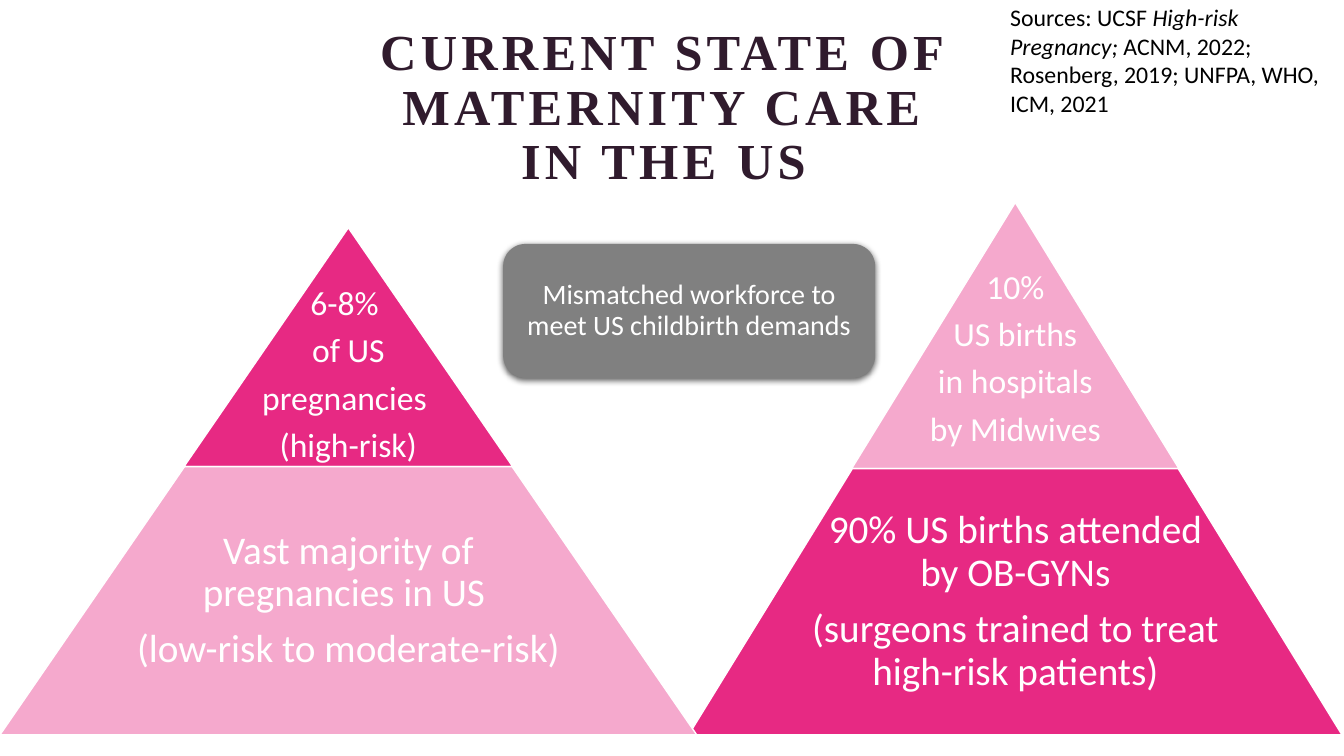
from dataclasses import dataclass

from lxml.etree import SubElement
from pptx import Presentation
from pptx.dml.color import RGBColor
from pptx.enum.shapes import MSO_SHAPE as Preset
from pptx.enum.text import MSO_ANCHOR as Anchor, PP_ALIGN as Align
from pptx.oxml.ns import qn
from pptx.util import Inches, Pt


@dataclass(frozen=True)
class Theme:
    """Colours, fonts and type sizes of the slide."""
    strong: str = "E72983"
    pale: str = "F5A9CD"
    grey: str = "808080"
    white: str = "FFFFFF"
    black: str = "000000"
    plum: str = "301B2D"
    heading_font: str = "Times New Roman"
    body_font: str = "Calibri"
    title: int = 36
    base: int = 28
    tip: int = 24
    callout: int = 20
    source: int = 17


THEME = Theme()


def format_run(run, size, color, font=THEME.body_font):
    """Set the font of one run."""
    run.font.name = font
    run.font.size = Pt(size)
    run.font.color.rgb = RGBColor.from_string(color)


def fill_text(shape, lines, size, color=THEME.white, font=THEME.body_font,
              inset=0.04, top_inset=None, gap=0):
    """Write centred paragraphs in the middle of a shape."""
    frame = shape.text_frame
    frame.word_wrap = True
    frame.vertical_anchor = Anchor.MIDDLE
    frame.margin_left = frame.margin_right = frame.margin_bottom = Inches(inset)
    frame.margin_top = Inches(inset if top_inset is None else top_inset)
    frame.text = "\n".join(lines)
    for paragraph in frame.paragraphs:
        paragraph.alignment = Align.CENTER
        paragraph.line_spacing = 0.9
        paragraph.space_after = Pt(gap)
        for run in paragraph.runs:
            format_run(run, size, color, font)


def add_text_box(slide, left, top, width, height):
    """Add an empty text box."""
    return slide.shapes.add_textbox(
        Inches(left), Inches(top), Inches(width), Inches(height))


def add_tier(slide, left, top, width, height, slope, color):
    """Add one tier of a pyramid."""
    tier = slide.shapes.add_shape(
        Preset.TRAPEZOID, Inches(left), Inches(top), Inches(width), Inches(height))
    tier.adjustments[0] = slope
    tier.shadow.inherit = False
    tier.fill.solid()
    tier.fill.fore_color.rgb = RGBColor.from_string(color)
    tier.line.color.rgb = RGBColor.from_string(THEME.white)
    tier.line.width = Pt(1)


def add_pyramid(slide, left, top, width, split, bottom, slope, colors,
                tip_lines, tip_inset, base_lines):
    """Add a two-tier pyramid with text on both tiers."""
    center = left + width / 2
    tip_height, base_height = split - top, bottom - split
    tip_width, base_text_width = 2 * slope * tip_height, 0.65 * width
    tip_left = center - tip_width / 2
    add_tier(slide, tip_left, top, tip_width, tip_height, slope, colors[0])
    add_tier(slide, left, split, width, base_height, slope, colors[1])
    tip_box = add_text_box(slide, tip_left, top, tip_width, tip_height)
    fill_text(tip_box, tip_lines, THEME.tip, top_inset=tip_inset, gap=8)
    base_box = add_text_box(
        slide, center - base_text_width / 2, split, base_text_width, base_height)
    fill_text(base_box, base_lines, THEME.base, gap=10)


def add_title(slide, text):
    """Add the letter-spaced bold title."""
    box = add_text_box(slide, 0.74, 0.18, 11.85, 1.8)
    fill_text(box, [text], THEME.title, THEME.plum, THEME.heading_font, inset=0.05)
    for run in box.text_frame.paragraphs[0].runs:
        run.font.bold = True
        run.font._element.set("spc", "300")


def add_soft_shadow(shape):
    """Give a shape a soft shadow straight below it."""
    shape.shadow.inherit = False
    effects = shape._element.spPr.find(qn("a:effectLst"))
    shadow = SubElement(effects, qn("a:outerShdw"), blurRad=str(Pt(4.5)),
                        dist=str(Pt(1.5)), dir="5400000", rotWithShape="0")
    color = SubElement(shadow, qn("a:srgbClr"), val=THEME.black)
    SubElement(color, qn("a:alpha"), val="63000")


def add_callout(slide, text):
    """Add the grey rounded message between the pyramids."""
    callout = slide.shapes.add_shape(
        Preset.ROUNDED_RECTANGLE, Inches(4.99), Inches(2.42), Inches(3.69), Inches(1.33))
    callout.fill.solid()
    callout.fill.fore_color.rgb = RGBColor.from_string(THEME.grey)
    callout.line.fill.background()
    add_soft_shadow(callout)
    fill_text(callout, [text], THEME.callout, inset=0.08)


def add_sources(slide, parts):
    """Add the source note from (text, italic) parts."""
    frame = add_text_box(slide, 9.92, -0.02, 3.58, 0.96).text_frame
    frame.word_wrap = True
    for text, italic in parts:
        run = frame.paragraphs[0].add_run()
        run.text = text
        format_run(run, THEME.source, THEME.black)
        run.font.italic = italic


def main():
    """Build and save the slide."""
    presentation = Presentation()
    presentation.slide_width = Inches(13.33)
    presentation.slide_height = Inches(7.5)
    slide = presentation.slides.add_slide(presentation.slide_layouts[6])
    add_pyramid(slide, 6.83, 2.01, 6.48, 4.65, 7.29, 0.615,
                (THEME.pale, THEME.strong),
                ["10%", "US births", "in hospitals", "by Midwives"], 0.51,
                ["90% US births attended by OB-GYNs",
                 "(surgeons trained to treat high-risk patients)"])
    add_title(slide, "CURRENT STATE OF \vMATERNITY CARE \vIN THE US ")
    add_callout(slide, "Mismatched workforce to meet US childbirth demands")
    add_pyramid(slide, 0, 2.26, 6.91, 4.63, 7.29, 0.688,
                (THEME.strong, THEME.pale),
                ["6-8% ", "of US", "pregnancies ", "(high-risk)"], 0.6,
                ["Vast majority of pregnancies in US ",
                 "(low-risk to moderate-risk)"])
    add_sources(slide, [("Sources: UCSF ", False), ("High-risk Pregnancy; ", True),
                        ("ACNM, 2022; Rosenberg, 2019; UNFPA, WHO, ICM, 2021", False)])
    presentation.save("out.pptx")


if __name__ == "__main__":
    main()
